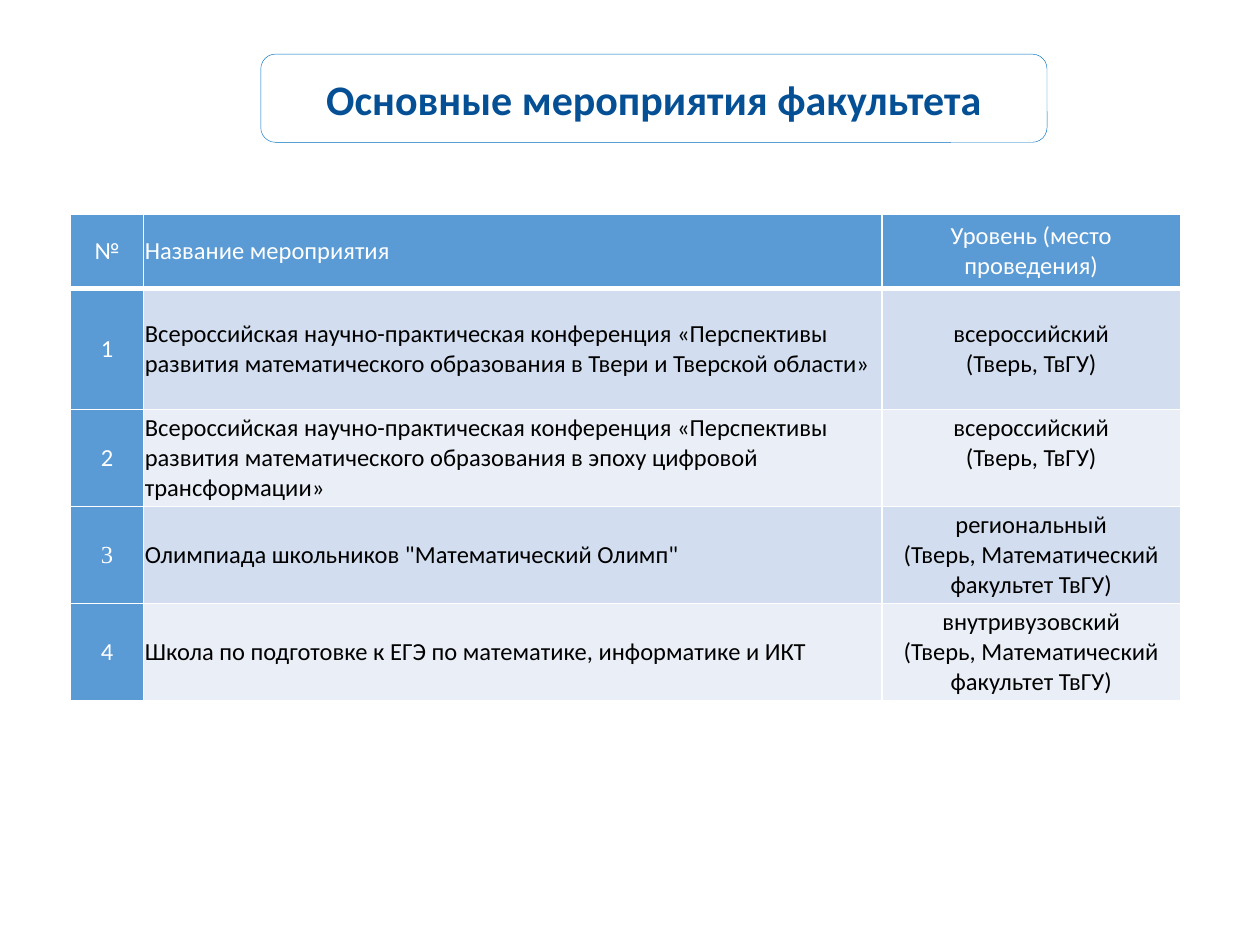
from lxml import etree
from pptx import Presentation
from pptx.dml.color import RGBColor
from pptx.enum.shapes import MSO_SHAPE
from pptx.enum.text import MSO_ANCHOR, PP_ALIGN
from pptx.oxml.ns import qn
from pptx.util import Inches, Pt

ROUND = MSO_SHAPE.ROUNDED_RECTANGLE
MIDDLE = MSO_ANCHOR.MIDDLE
LEFT, CENTER = PP_ALIGN.LEFT, PP_ALIGN.CENTER

COLORS = {
    "white": "FFFFFF", "black": "000000", "title": "055095", "edge": "0070C0",
    "head": "5B9BD5", "odd": "D2DEEF", "even": "EAEFF7",
}
COLS = [0.58, 5.86, 2.37]
HEIGHTS = [0.59, 0.96, 0.77, 0.77, 0.77]
ROWS = [
    ["№", "Название мероприятия", "Уровень (место проведения)"],
    ["1", "Всероссийская научно-практическая конференция «Перспективы развития "
     "математического образования в Твери и Тверской области»",
     "всероссийский\n(Тверь, ТвГУ)"],
    ["2", "Всероссийская научно-практическая конференция «Перспективы развития "
     "математического образования в эпоху цифровой трансформации»",
     "всероссийский\n(Тверь, ТвГУ)"],
    ["3", 'Олимпиада школьников "Математический Олимп"',
     "региональный\n(Тверь, Математический факультет ТвГУ)"],
    ["4", "Школа по подготовке к ЕГЭ по математике, информатике и ИКТ",
     "внутривузовский\n(Тверь, Математический факультет ТвГУ)"],
]


def rgb(name):
    return RGBColor.from_string(COLORS[name])


class Deck:
    font = "Calibri"
    size = 14
    inset = Inches(0.01)

    def __init__(self, slide):
        self.slide = slide

    def label(self, frame, text, color, align, size=size, bold=False, font=font):
        para = frame.paragraphs[0]
        para.text = text
        para.alignment = align
        for run in para.runs:
            run.font.name = font
            run.font.size = Pt(size)
            run.font.bold = bold
            run.font.color.rgb = rgb(color)
        # Line breaks keep the text size
        for brk in para._p.findall(qn("a:br")):
            etree.SubElement(brk, qn("a:rPr"), sz=str(size * 100))

    def banner(self, text, left, top, width, height):
        box = self.slide.shapes.add_shape(
            ROUND, Inches(left), Inches(top), Inches(width), Inches(height))
        box.shadow.inherit = False
        box.fill.solid()
        box.fill.fore_color.rgb = rgb("white")
        box.line.color.rgb = rgb("edge")
        box.line.width = Pt(0.25)
        box.text_frame.word_wrap = True
        box.text_frame.vertical_anchor = MIDDLE
        self.label(box.text_frame, text, "title", CENTER, 24, True)

    def border(self, cell, bottom):
        props = cell._tc.get_or_add_tcPr()
        for side, width in zip("LRTB", (1, 1, 1, bottom)):
            line = etree.SubElement(props, qn(f"a:ln{side}"), w=str(Pt(width)))
            fill = etree.SubElement(line, qn("a:solidFill"))
            etree.SubElement(fill, qn("a:srgbClr"), val=COLORS["white"])

    def cell(self, cell, text, row, col):
        header = row == 0 or col == 0
        self.border(cell, 3 if row == 0 else 1)
        cell.fill.solid()
        cell.fill.fore_color.rgb = rgb(
            "head" if header else "odd" if row % 2 else "even")
        cell.vertical_anchor = MIDDLE
        cell.margin_left = cell.margin_right = self.inset
        cell.margin_top = cell.margin_bottom = self.inset
        self.label(cell.text_frame, text, "white" if header else "black",
                   LEFT if col == 1 else CENTER,
                   font="Times New Roman" if text == "3" else self.font)

    def table(self, rows, left, top, cols, heights):
        grid = self.slide.shapes.add_table(
            len(rows), len(cols), Inches(left), Inches(top),
            Inches(sum(cols)), Inches(sum(heights))).table
        for col, width in zip(grid.columns, cols):
            col.width = Inches(width)
        for row, height in zip(grid.rows, heights):
            row.height = Inches(height)
        for r, texts in enumerate(rows):
            for c, text in enumerate(texts):
                self.cell(grid.cell(r, c), text, r, c)
        return grid


def main():
    prs = Presentation()
    prs.slide_width, prs.slide_height = Inches(10), Inches(7.5)
    deck = Deck(prs.slides.add_slide(prs.slide_layouts[6]))

    # Title
    deck.banner("Основные мероприятия факультета", 2.07, 0.43, 6.24, 0.7)

    # Events; the level of the second one sits half a line higher
    events = deck.table(ROWS, 0.56, 1.7, COLS, HEIGHTS)
    events.cell(2, 2).margin_bottom = Inches(0.25)

    prs.save("out.pptx")


if __name__ == "__main__":
    main()
